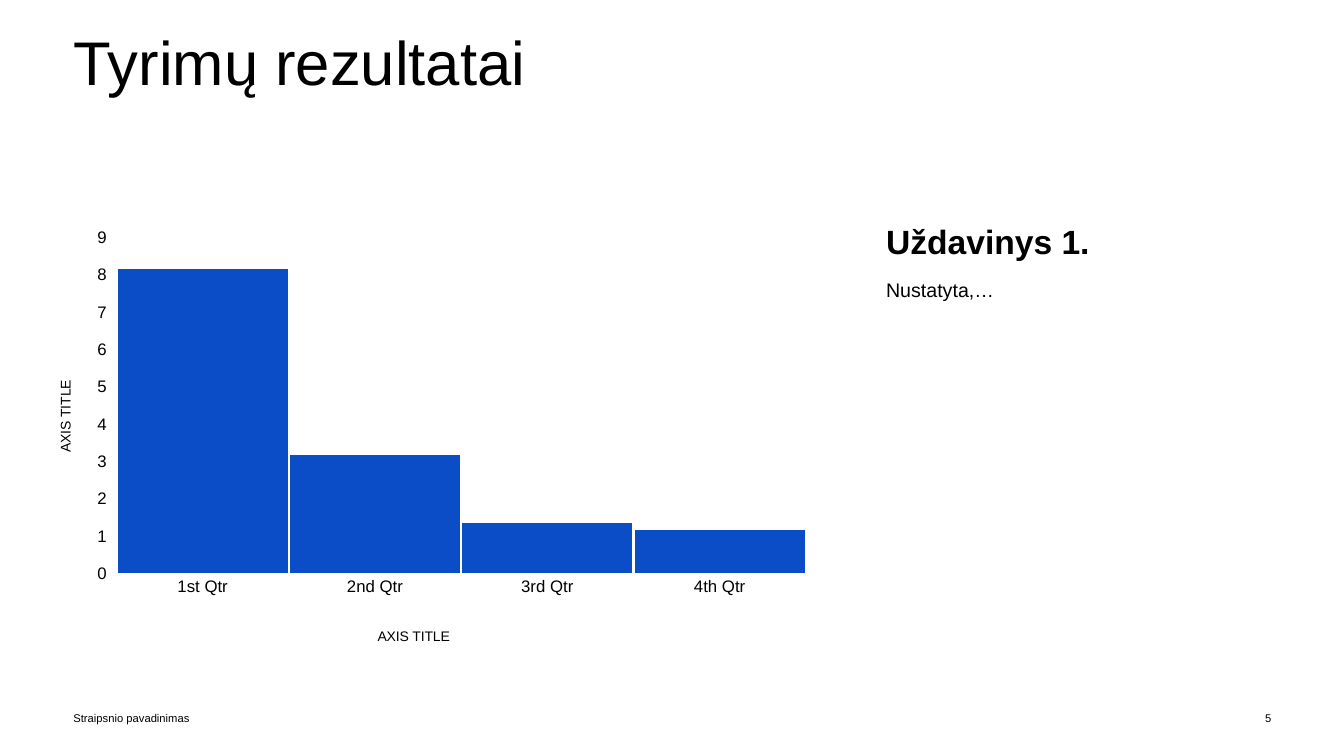
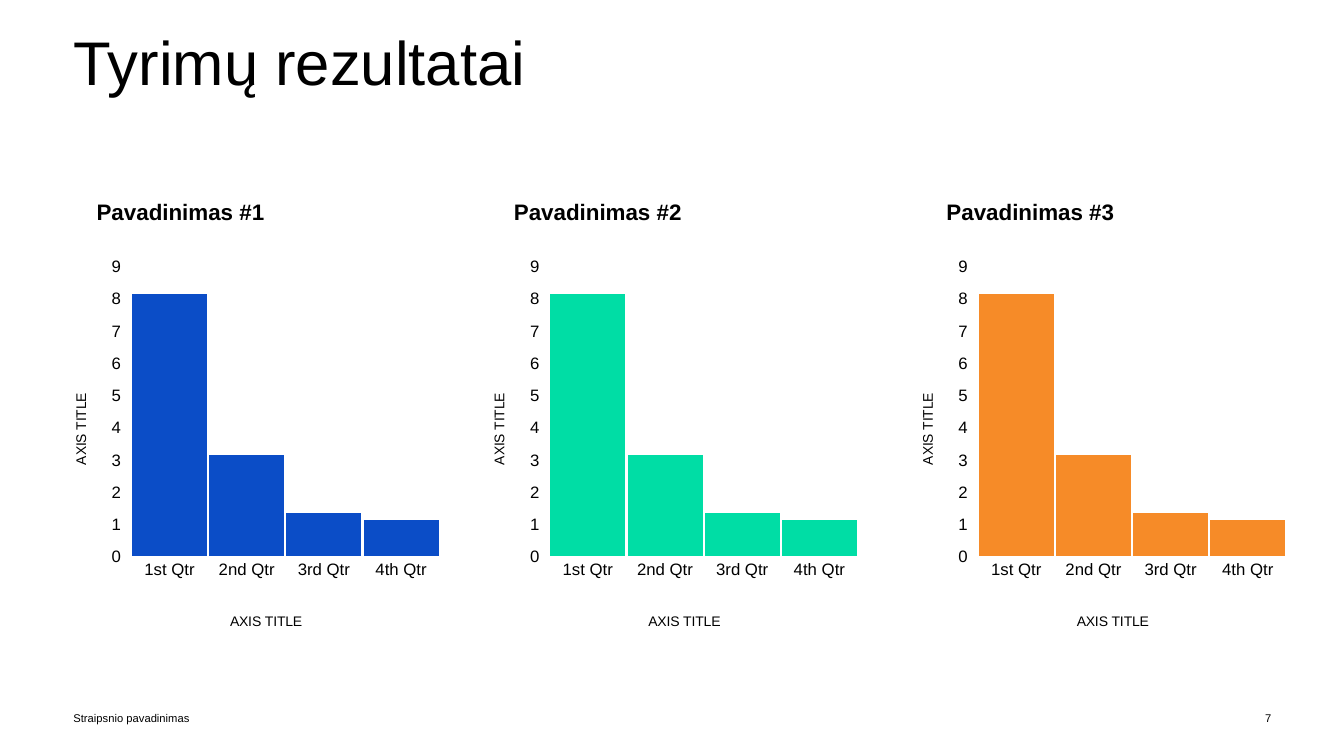
from dataclasses import dataclass

import lxml.etree
import pptx
import pptx.chart.data
import pptx.dml.color
import pptx.enum.chart
import pptx.enum.text
import pptx.oxml.ns
import pptx.util

RGB = pptx.dml.color.RGBColor
BLACK = RGB(0x00, 0x00, 0x00)
WHITE = RGB(0xFF, 0xFF, 0xFF)
GREY = RGB(0xD9, 0xD9, 0xD9)
BLUE = RGB(0x0B, 0x4D, 0xC7)
GREEN = RGB(0x00, 0xDD, 0xA5)
ORANGE = RGB(0xF6, 0x8B, 0x28)

FONT = "Arial"
ALIGN = pptx.enum.text.PP_ALIGN
ANCHOR = pptx.enum.text.MSO_ANCHOR
TICK = pptx.enum.chart.XL_TICK_MARK

# Slide grid: 64 columns by 36 rows
WIDTH, HEIGHT = pptx.util.Inches(13.33), pptx.util.Inches(7.5)
COLS, ROWS = 64, 36

TITLE = "Tyrimų rezultatai"
FOOTER = "Straipsnio pavadinimas"
AXIS = "AXIS TITLE"
QUARTERS = ("1st Qtr", "2nd Qtr", "3rd Qtr", "4th Qtr")
VALUES = (8.2, 3.2, 1.4, 1.2)


@dataclass(frozen=True)
class Box:
    """An area in grid columns and rows."""
    left: float
    top: float
    width: float
    height: float

    def emu(self) -> tuple[int, int, int, int]:
        col, row = WIDTH / COLS, HEIGHT / ROWS
        return (round(self.left * col), round(self.top * row),
                round(self.width * col), round(self.height * row))


@dataclass(frozen=True)
class Line:
    """One paragraph of text and its look."""
    text: str
    size: float
    bold: bool = False
    space: float = 0.9
    before: float = 0
    align: ALIGN = ALIGN.LEFT


@dataclass(frozen=True)
class Panel:
    """A small chart with its heading."""
    left: float
    head: float
    color: RGB


TITLE_BOX = Box(3.02, 1.3, 56.6, 6.96)
FOOT_BOX = Box(3.02, 32.45, 12.58, 3.55)
PAGE_BOX = Box(48.44, 32.45, 12.58, 3.55)
CHART_BOX = Box(1.82, 10.51, 37.3, 20.4)
NOTE_BOX = Box(41.72, 10.51, 16.22, 12.67)

PANELS = (Panel(2.93, 4.13, BLUE), Panel(22.85, 24, GREEN),
          Panel(43.25, 44.6, ORANGE))

# Shares of the chart area: x, y, width, height
BIG_PLOT = (0.1, 0.04, 0.88, 0.79)
SMALL_PLOT = (0.18, 0.04, 0.8, 0.77)
CAT_SPOT = (0.43, 0.95)
VAL_SPOT = (0.02, 0.37)


def style(font, size: float, bold: bool = False) -> None:
    font.name, font.size, font.bold = FONT, pptx.util.Pt(size), bold
    font.color.rgb = BLACK


def fill(frame, lines: tuple[Line, ...], anchor: ANCHOR = ANCHOR.TOP) -> None:
    frame.word_wrap = True
    frame.auto_size = pptx.enum.text.MSO_AUTO_SIZE.NONE
    frame.vertical_anchor = anchor
    frame.text = "\n".join(line.text for line in lines)
    for para, line in zip(frame.paragraphs, lines):
        para.alignment = line.align
        para.line_spacing = line.space
        para.space_before = pptx.util.Pt(line.before)
        for run in para.runs:
            style(run.font, line.size, line.bold)


def write(slide, box: Box, *lines: Line, anchor: ANCHOR = ANCHOR.TOP) -> None:
    fill(slide.shapes.add_textbox(*box.emu()).text_frame, lines, anchor)


def place(host, index: int, spot: tuple[float, ...]) -> None:
    """Give a chart part a fixed place, in shares of the chart."""
    qn = pptx.oxml.ns.qn
    for old in host.findall(qn("c:layout")):
        host.remove(old)
    layout = lxml.etree.Element(qn("c:layout"))
    manual = lxml.etree.SubElement(layout, qn("c:manualLayout"))
    marks = [("xMode", "edge"), ("yMode", "edge"), *zip("xywh", spot)]
    if len(spot) == 4:
        marks.insert(0, ("layoutTarget", "inner"))
    for name, value in marks:
        lxml.etree.SubElement(manual, qn(f"c:{name}")).set("val", str(value))
    host.insert(index, layout)


def label(axis, spot: tuple[float, float], turn: int) -> None:
    style(axis.tick_labels.font, 12)
    axis.has_major_gridlines = False
    title = axis.axis_title
    title.text_frame.text = AXIS
    style(title.text_frame.paragraphs[0].runs[0].font, 10)
    body = title.element.find(".//" + pptx.oxml.ns.qn("a:bodyPr"))
    body.set("rot", str(turn * 60000))
    body.set("vert", "horz")
    place(title.element, 1, spot)


def plot(slide, box: Box, color: RGB, area: tuple[float, ...]) -> None:
    data = pptx.chart.data.CategoryChartData()
    data.categories = QUARTERS
    data.add_series("Series 1", VALUES)
    kind = pptx.enum.chart.XL_CHART_TYPE.COLUMN_CLUSTERED
    chart = slide.shapes.add_chart(kind, *box.emu(), data).chart
    chart.has_title = chart.has_legend = False
    style(chart.font, 10)

    # Columns
    bars = chart.plots[0]
    bars.gap_width, bars.overlap, bars.vary_by_categories = 0, 0, False
    look = bars.series[0].format
    look.fill.solid()
    look.fill.fore_color.rgb = color
    look.line.color.rgb = WHITE
    look.line.width = pptx.util.Pt(1.5)

    # Axes
    cat, val = chart.category_axis, chart.value_axis
    label(cat, CAT_SPOT, 0)
    label(val, VAL_SPOT, -90)
    cat.major_tick_mark = TICK.NONE
    cat.format.line.color.rgb = GREY
    cat.format.line.width = pptx.util.Pt(0.75)
    val.major_tick_mark = TICK.OUTSIDE
    val.format.line.fill.background()
    val.minimum_scale, val.maximum_scale, val.major_unit = 0, 9, 1
    place(chart.element.find(".//" + pptx.oxml.ns.qn("c:plotArea")), 0, area)


def start(deck, page: int):
    """Add a slide with the shared title and footer."""
    slide = deck.slides.add_slide(deck.slide_layouts[5])
    slide.background.fill.solid()
    slide.background.fill.fore_color.rgb = WHITE
    title = slide.shapes.title
    title.left, title.top, title.width, title.height = TITLE_BOX.emu()
    fill(title.text_frame, (Line(TITLE, 44),))
    write(slide, FOOT_BOX, Line(FOOTER, 8), anchor=ANCHOR.MIDDLE)
    write(slide, PAGE_BOX, Line(str(page), 8, align=ALIGN.RIGHT),
          anchor=ANCHOR.MIDDLE)
    return slide


def main() -> None:
    deck = pptx.Presentation()
    deck.slide_width, deck.slide_height = WIDTH, HEIGHT

    # One chart with a note
    slide = start(deck, 5)
    plot(slide, CHART_BOX, BLUE, BIG_PLOT)
    write(slide, NOTE_BOX, Line("Uždavinys 1.", 24, bold=True),
          Line("Nustatyta,…", 14, space=1.1, before=10))

    # Three charts side by side
    slide = start(deck, 7)
    for num, panel in enumerate(PANELS, 1):
        plot(slide, Box(panel.left, 12, 18.38, 18.19), panel.color, SMALL_PLOT)
        write(slide, Box(panel.head, 9.36, 11.42, 2.11),
              Line(f"Pavadinimas #{num}", 16, bold=True))

    deck.save("out.pptx")


if __name__ == "__main__":
    main()
